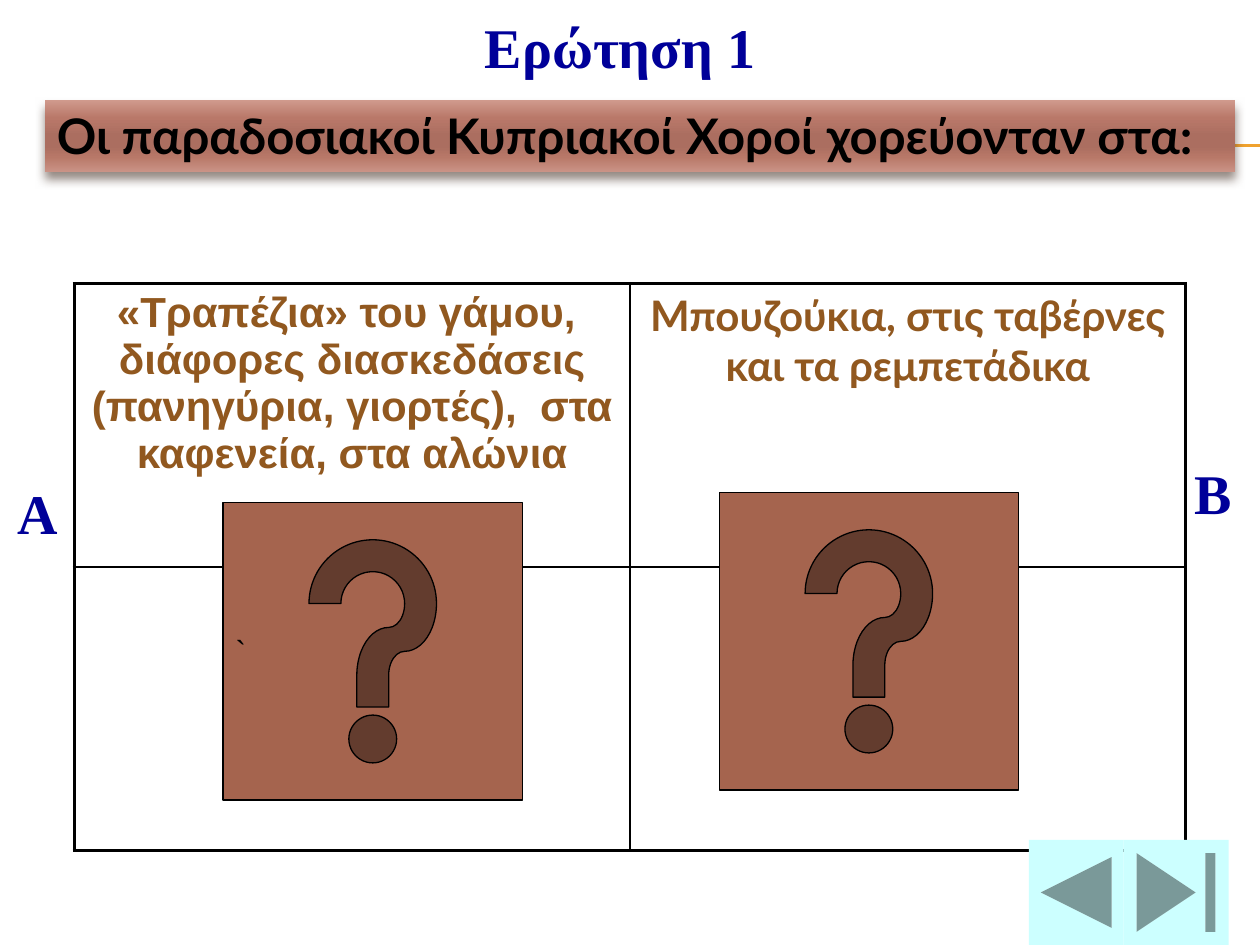
from dataclasses import dataclass

from lxml import etree
from pptx import Presentation
from pptx.dml.color import RGBColor
from pptx.enum.shapes import MSO_CONNECTOR, MSO_SHAPE
from pptx.enum.text import MSO_ANCHOR, PP_ALIGN
from pptx.oxml import parse_xml
from pptx.oxml.ns import nsdecls, qn
from pptx.util import Pt

HELP = MSO_SHAPE.ACTION_BUTTON_HELP
END = MSO_SHAPE.ACTION_BUTTON_END
BACK = MSO_SHAPE.ACTION_BUTTON_BACK_OR_PREVIOUS
RECT = MSO_SHAPE.RECTANGLE
LINE = MSO_CONNECTOR.STRAIGHT
LEFT, CENTER = PP_ALIGN.LEFT, PP_ALIGN.CENTER
MIDDLE, TOP = MSO_ANCHOR.MIDDLE, MSO_ANCHOR.TOP

COLORS = {
    "black": "000000",
    "white": "FFFFFF",
    "navy": "000099",
    "brown": "91581F",
    "rust": "A5644E",
    "aqua": "CCFFFF",
    "amber": "F0A22E",
    "shade": "4E3B30",
}
BLEND = [(0, "D09A8D"), (25, "B97869"), (50, "AB6E60"),
         (65, "AB6E60"), (80, "B87868"), (100, "CA9386")]


@dataclass
class Box:
    left: float
    top: float
    width: float
    height: float

    def spot(self) -> tuple:
        return Pt(self.left), Pt(self.top), Pt(self.width), Pt(self.height)


@dataclass
class Style:
    font: str
    size: float
    color: str
    bold: bool = True
    align: int = LEFT
    before: float = 0


@dataclass
class Label:
    text: str
    box: Box


@dataclass
class Button:
    kind: int
    box: Box
    fill: str
    edge: bool = False
    text: str = ""


TITLE = Style("Times New Roman", 32, "navy", before=4)
HEAD = Style("Lato", 28, "black")
MARK = Style("Arial", 18, "black", bold=False)

LABELS = [
    Label("Ερώτηση 1", Box(270, 3.6, 192, 46)),
    Label("Α", Box(2.9, 270, 36, 45.4)),
    Label("Β", Box(675.4, 258.5, 36, 45.4)),
]
BUTTONS = [
    Button(HELP, Box(127.5, 287.2, 171, 170), "rust", True, "`"),
    Button(HELP, Box(411, 281.5, 171, 170), "rust", True),
    Button(END, Box(642, 480, 60, 60), "aqua"),
    Button(BACK, Box(588, 480, 54, 60), "aqua"),
]
BANNER = Label("Οι παραδοσιακοί Κυπριακοί Χοροί χορεύονταν στα:",
               Box(25.5, 57, 680.2, 41.2))
GRID = Box(42.5, 162, 635, 324)
ANSWERS = [
    ("«Τραπέζια» του γάμου,  διάφορες διασκεδάσεις "
     "(πανηγύρια, γιορτές),  στα καφενεία, στα αλώνια", "Arial"),
    ("Μπουζούκια, στις ταβέρνες και τα ρεμπετάδικα", "Lato"),
]


def rgb(name: str) -> RGBColor:
    return RGBColor.from_string(COLORS[name])


def write(frame, text: str, style: Style) -> None:
    para = frame.paragraphs[0]
    para.alignment = style.align
    para.space_before = Pt(style.before)
    run = para.add_run()
    run.text = text
    run.font.name = style.font
    run.font.size = Pt(style.size)
    run.font.bold = style.bold
    run.font.color.rgb = rgb(style.color)


def draw_rule(slide, top: float) -> None:
    rule = slide.shapes.add_connector(LINE, Pt(40.3), Pt(top), Pt(720), Pt(top))
    rule.line.color.rgb = rgb("amber")
    rule.line.width = Pt(0.75)
    etree.SubElement(rule._element.spPr, qn("a:effectLst"))


def draw_label(slide, label: Label) -> None:
    frame = slide.shapes.add_textbox(*label.box.spot()).text_frame
    frame.word_wrap = True
    write(frame, label.text, TITLE)


def draw_button(slide, item: Button) -> None:
    shape = slide.shapes.add_shape(item.kind, *item.box.spot())
    shape.shadow.inherit = False
    shape.fill.solid()
    shape.fill.fore_color.rgb = rgb(item.fill)
    if item.edge:
        shape.line.color.rgb = rgb("black")
        shape.line.width = Pt(0.75)
    else:
        shape.line.fill.background()
    if item.text:
        frame = shape.text_frame
        frame.word_wrap = False
        frame.vertical_anchor = MIDDLE
        write(frame, item.text, MARK)


def draw_banner(slide) -> None:
    """Bar with a six-stop vertical blend and a soft shadow below it."""
    bar = slide.shapes.add_shape(RECT, *BANNER.box.spot())
    bar.line.fill.background()
    stops = "".join(f'<a:gs pos="{pos * 1000}"><a:srgbClr val="{tone}"/></a:gs>'
                    for pos, tone in BLEND)
    props = bar._element.spPr
    props.find(qn("a:prstGeom")).addnext(parse_xml(
        f'<a:gradFill {nsdecls("a")} rotWithShape="1"><a:gsLst>{stops}</a:gsLst>'
        '<a:lin ang="5400000" scaled="0"/></a:gradFill>'))
    props.append(parse_xml(
        f'<a:effectLst {nsdecls("a")}><a:outerShdw blurRad="{Pt(6)}" '
        f'dist="{Pt(4)}" dir="5400000" rotWithShape="0">'
        f'<a:srgbClr val="{COLORS["shade"]}"><a:alpha val="60000"/></a:srgbClr>'
        '</a:outerShdw></a:effectLst>'))
    frame = bar.text_frame
    frame.word_wrap = True
    frame.vertical_anchor = TOP
    write(frame, BANNER.text, HEAD)


def edge_cell(cell, row: int, col: int) -> None:
    """Heavy lines on the outside of the grid, thin ones within."""
    props = cell._tc.get_or_add_tcPr()
    outer = {"L": col == 0, "R": col == 1, "T": row == 0, "B": row == 1}
    for side, heavy in outer.items():
        props.append(parse_xml(
            f'<a:ln{side} {nsdecls("a")} w="{Pt(2.25 if heavy else 1)}">'
            f'<a:solidFill><a:srgbClr val="{COLORS["black"]}"/></a:solidFill>'
            f'</a:ln{side}>'))


def draw_grid(slide) -> None:
    table = slide.shapes.add_table(2, 2, *GRID.spot()).table
    table.first_row = table.horz_banding = False
    for row in range(2):
        for col in range(2):
            cell = table.cell(row, col)
            edge_cell(cell, row, col)
            cell.fill.solid()
            cell.fill.fore_color.rgb = rgb("white")
    for col, (text, font) in enumerate(ANSWERS):
        write(table.cell(0, col).text_frame, text,
              Style(font, 24, "brown", align=CENTER))


def main() -> None:
    deck = Presentation()
    deck.slide_width, deck.slide_height = Pt(720), Pt(540)
    slide = deck.slides.add_slide(deck.slide_layouts[6])
    for top in (82.8, 83.5):
        draw_rule(slide, top)
    draw_grid(slide)
    for item in BUTTONS:
        draw_button(slide, item)
    draw_banner(slide)
    for label in LABELS:
        draw_label(slide, label)
    deck.save("out.pptx")


if __name__ == "__main__":
    main()
